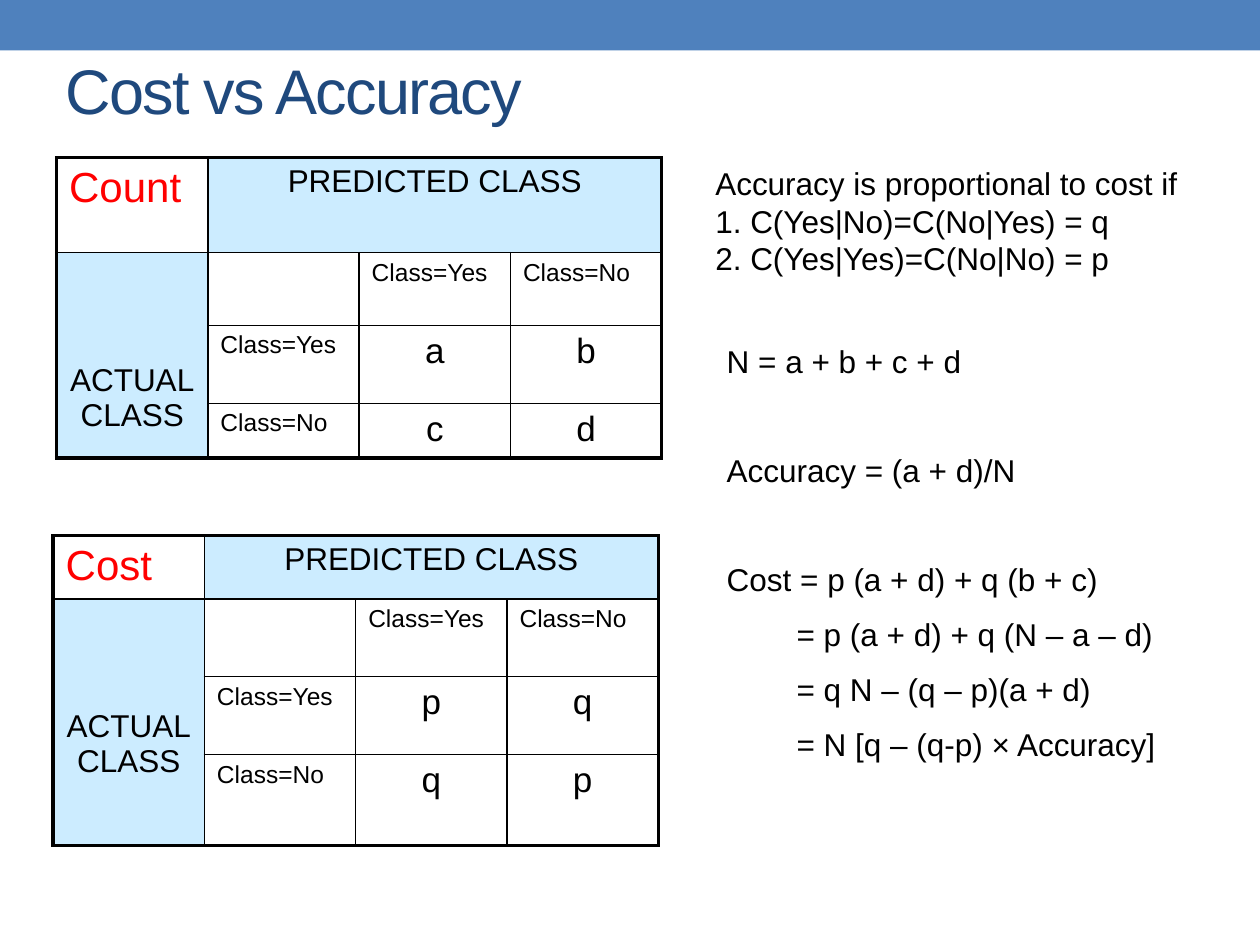
"""Build the Cost vs Accuracy slide with two class matrices and formulas."""
from lxml import etree
from pptx import Presentation
from pptx.dml.color import RGBColor
from pptx.enum.shapes import MSO_SHAPE
from pptx.enum.text import MSO_ANCHOR, PP_ALIGN
from pptx.oxml.ns import qn
from pptx.util import Cm, Pt

COLORS = {"band": "4F81BD", "title": "1F497D", "text": "000000",
          "accent": "FF0000", "header": "CCECFF"}


def format_paragraph(paragraph, size, color="text", align=PP_ALIGN.LEFT):
    paragraph.alignment = align
    for run in paragraph.runs:
        run.font.size = Pt(size)
        run.font.name = "Arial"
        run.font.color.rgb = RGBColor.from_string(COLORS[color])


def add_border(cell, side, width):
    line = etree.SubElement(cell._tc.get_or_add_tcPr(), qn(f"a:ln{side}"), w=str(Pt(width)))
    fill = etree.SubElement(line, qn("a:solidFill"))
    etree.SubElement(fill, qn("a:srgbClr"), val=COLORS["text"])


presentation = Presentation()
presentation.slide_width = Cm(25.4)
presentation.slide_height = Cm(19.05)
slide = presentation.slides.add_slide(presentation.slide_layouts[6])

band = slide.shapes.add_shape(MSO_SHAPE.RECTANGLE, 0, 0, Cm(25.4), Cm(1.02))
band.shadow.inherit = False
band.fill.solid()
band.fill.fore_color.rgb = RGBColor.from_string(COLORS["band"])
band.line.fill.background()

title = slide.shapes.add_textbox(Cm(1.07), Cm(1.07), Cm(23.01), Cm(1.47))
title.text_frame.word_wrap = True
title.text_frame.vertical_anchor = MSO_ANCHOR.MIDDLE
title_paragraph = title.text_frame.paragraphs[0]
title_paragraph.text = "Cost vs Accuracy"
format_paragraph(title_paragraph, 36, "title")
title_paragraph.runs[0].font._element.set("spc", "-100")

matrices = [
    ("Count", "abcd", 1.14, 3.18, [1.91, 1.47, 1.57, 1.09]),
    ("Cost", "pqqp", 1.07, 10.8, [1.24, 1.57, 1.57, 1.83]),
]
for name, values, left, top, heights in matrices:
    frame = slide.shapes.add_table(4, 4, Cm(left), Cm(top), Cm(12.19), Cm(sum(heights)))
    table = frame.table
    table.first_row = False
    table.horz_banding = False
    for column in table.columns:
        column.width = Cm(3.05)
    for row, height in zip(table.rows, heights):
        row.height = Cm(height)
    table.cell(0, 1).merge(table.cell(0, 3))
    table.cell(1, 0).merge(table.cell(3, 0))

    entries = {
        (0, 0): (name, 24, "accent", PP_ALIGN.LEFT),
        (0, 1): ("PREDICTED CLASS", 18, "text", PP_ALIGN.CENTER),
        (1, 0): ("ACTUAL\vCLASS", 18, "text", PP_ALIGN.CENTER),
    }
    for index, label in enumerate(["Class=Yes", "Class=No"], 2):
        entries[1, index] = entries[index, 1] = (label, 14, "text", PP_ALIGN.LEFT)
    for index, value in enumerate(values):
        entries[2 + index // 2, 2 + index % 2] = (value, 20, "text", PP_ALIGN.CENTER)

    for row in range(4):
        for column in range(4):
            cell = table.cell(row, column)
            last_row = row + cell.span_height == 4 or row == 3
            last_column = column + cell.span_width == 4 or column == 3
            sides = {"L": column == 0, "R": last_column, "T": row == 0, "B": last_row}
            for side, outer in sides.items():
                if outer or not cell.is_spanned:
                    add_border(cell, side, 2.25 if outer else 1)
            if (row == 0) != (column == 0):
                cell.fill.solid()
                cell.fill.fore_color.rgb = RGBColor.from_string(COLORS["header"])
            else:
                cell.fill.background()
            if (row, column) in entries:
                text, size, color, align = entries[row, column]
                paragraph = cell.text_frame.paragraphs[0]
                paragraph.text = text
                format_paragraph(paragraph, size, color, align)
    table.cell(1, 0).margin_top = Cm(2.22)

formulas = [
    ("N = a + b + c + d", 0, 0),
    ("Accuracy = (a + d)/N", 40.5, 0),
    ("Cost = p (a + d) + q (b + c)", 40.5, 0),
    ("= p (a + d) + q (N – a – d)", 9.9, 1.41),
    ("= q N – (q – p)(a + d)", 9.9, 1.41),
    ("= N [q – (q-p) × Accuracy]", 9.9, 1.41),
]
conditions = [
    ("Accuracy is proportional to cost if\v1. C(Yes|No)=C(No|Yes) = q\v"
     "2. C(Yes|Yes)=C(No|No) = p", 0, 0),
]
text_blocks = [
    (formulas, 14.4, 6.78, 9.96, 10.19),
    (conditions, 14.17, 3.18, 10.36, 2.54),
]
for lines, left, top, width, height in text_blocks:
    box = slide.shapes.add_textbox(Cm(left), Cm(top), Cm(width), Cm(height))
    text_frame = box.text_frame
    text_frame.word_wrap = True
    text_frame.text = "\n".join(text for text, gap, indent in lines)
    for paragraph, (text, gap, indent) in zip(text_frame.paragraphs, lines):
        format_paragraph(paragraph, 18)
        paragraph.space_before = Pt(gap)
        paragraph._p.get_or_add_pPr().set("marL", str(Cm(indent)))

presentation.save("out.pptx")
